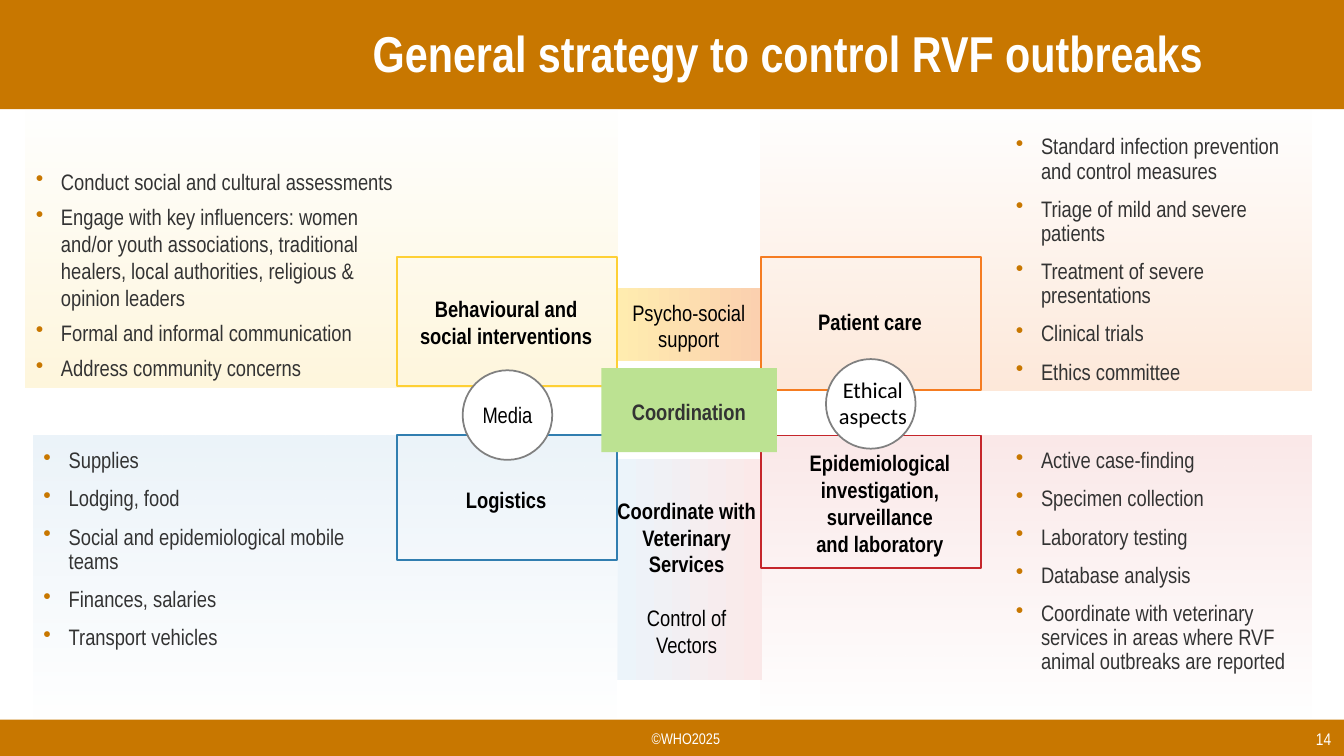
from lxml import etree
from pptx import Presentation
from pptx.dml.color import RGBColor
from pptx.enum.shapes import MSO_SHAPE
from pptx.enum.text import MSO_ANCHOR, PP_ALIGN
from pptx.oxml.ns import qn
from pptx.util import Pt

RECTANGLE, OVAL = MSO_SHAPE.RECTANGLE, MSO_SHAPE.OVAL
TOP, MIDDLE, BOTTOM = MSO_ANCHOR.TOP, MSO_ANCHOR.MIDDLE, MSO_ANCHOR.BOTTOM
LEFT, CENTER, RIGHT = PP_ALIGN.LEFT, PP_ALIGN.CENTER, PP_ALIGN.RIGHT


class Theme:
    font, ethics_font = "Arial Narrow", "Calibri"
    title_size, body_size, number_size, footer_size = 36, 16, 12, 11
    brand, white, black, text, gray = "C87700", "FFFFFF", "000000", "333333", "808080"
    yellow, orange, blue, red = "FED035", "F57C21", "317EB0", "C5262B"
    pale_yellow, pale_orange, pale_blue, pale_red = "FFF7DD", "FEE9DA", "ECF4FA", "FBE9E9"
    support_left, support_right, green = "FFECAF", "FBD0AF", "BCE292"


presentation = Presentation()
presentation.slide_width, presentation.slide_height = Pt(960), Pt(540)
slide = presentation.slides.add_slide(presentation.slide_layouts[5])


def add_box(position, fill=None, line=None, kind=RECTANGLE):
    shape = slide.shapes.add_shape(kind, *map(Pt, position))
    shape.shadow.inherit = False
    if fill:
        shape.fill.solid()
        shape.fill.fore_color.rgb = RGBColor.from_string(fill)
    else:
        shape.fill.background()
    if line:
        shape.line.color.rgb = RGBColor.from_string(line)
        shape.line.width = Pt(1.25)
    else:
        shape.line.fill.background()
    return shape


def add_text(position, texts, color=Theme.black, size=Theme.body_size, bold=False,
             align=CENTER, anchor=MIDDLE, font=Theme.font, box=None):
    """Write one paragraph per text into box, or into a new text box."""
    box = box or slide.shapes.add_textbox(0, 0, 0, 0)
    box.left, box.top, box.width, box.height = map(Pt, position)
    frame = box.text_frame
    frame.word_wrap = True
    frame.vertical_anchor = anchor
    for index, text in enumerate(texts):
        paragraph = frame.add_paragraph() if index else frame.paragraphs[0]
        paragraph.alignment = align
        run = paragraph.add_run()
        run.text = text
        run.font.name, run.font.size, run.font.bold = font, Pt(size), bold
        run.font.color.rgb = RGBColor.from_string(color)
    return frame


# Header and footer
add_box((0, 0, 960, 78), Theme.brand)
add_box((0, 514, 960, 26), Theme.brand)
add_text((382, 518, 216, 19), ["©WHO2025"], Theme.white, Theme.footer_size)
add_text((742, 518, 216, 19), ["14"], Theme.white, Theme.number_size, align=RIGHT)
title = slide.shapes.title
slide.shapes._spTree.append(title._element)
title_frame = add_text((259, 3.5, 678, 73), ["General strategy to control RVF outbreaks"],
                       Theme.white, Theme.title_size, True, LEFT, box=title)
title_frame.paragraphs[0].line_spacing = 0.9

# Shaded areas: angle 0 runs left to right, 270 downwards, 90 upwards;
# the four quadrant panels fade in from transparent
for position, colors, angle, fades in [
    ((441, 328, 103.5, 158), (Theme.pale_blue, Theme.pale_red), 0, False),
    ((441, 206, 103, 52), (Theme.support_left, Theme.support_right), 0, False),
    ((543.5, 76.5, 393, 202.5), (Theme.pale_orange,) * 2, 270, True),
    ((543.5, 311, 393, 202.5), (Theme.pale_red,) * 2, 90, True),
    ((18.5, 74.5, 422.5, 202.5), (Theme.pale_yellow,) * 2, 270, True),
    ((24, 311, 416.5, 202.5), (Theme.pale_blue,) * 2, 90, True),
]:
    panel = add_box(position)
    panel.fill.gradient()
    panel.fill.gradient_angle = angle
    for stop, color in zip(panel.fill.gradient_stops, colors):
        stop.color.rgb = RGBColor.from_string(color)
    if fades:
        first_color = next(panel._element.iter(qn("a:srgbClr")))
        etree.SubElement(first_color, qn("a:alpha"), val="0")

# Framed pillars with their labels
for frame_position, color, label_position, label in [
    ((543.5, 183.5, 157, 95), Theme.orange, (548.5, 216, 146, 27), ["Patient care"]),
    ((283.5, 311, 157, 89), Theme.blue, (288.5, 342, 146, 29), ["Logistics"]),
    ((283.5, 183.5, 157, 92.5), Theme.yellow, (288.5, 207, 146, 46),
     ["Behavioural and social interventions"]),
    ((543.5, 311, 157, 95), Theme.red, (550, 317, 157, 85),
     ["Epidemiological investigation,", "surveillance", "and laboratory"]),
]:
    add_box(frame_position, line=color)
    add_text(label_position, label, bold=True)

# Bulleted activities
for position, anchor, spacing, gap, activities in [
    ((24, 317.5, 260, 169), TOP, 0.9, 10,
     ["Supplies", "Lodging, food", "Social and epidemiological mobile teams",
      "Finances, salaries", "Transport vehicles"]),
    ((18.5, 95, 271, 181), BOTTOM, 1.0, 6,
     ["Conduct social and cultural assessments",
      "Engage with key influencers: women and/or youth associations, traditional "
      "healers, local authorities, religious & opinion leaders",
      "Formal and informal communication", "Address community concerns"]),
    ((718.5, 109.5, 217.5, 169), BOTTOM, 0.9, 10,
     ["Standard infection prevention and control measures",
      "Triage of mild and severe patients", "Treatment of severe presentations",
      "Clinical trials", "Ethics committee"]),
    ((718.5, 317.5, 219.5, 169), TOP, 0.9, 10,
     ["Active case-finding", "Specimen collection", "Laboratory testing", "Database analysis",
      "Coordinate with veterinary services in areas where RVF animal outbreaks are reported"]),
]:
    activity_frame = add_text(position, activities, Theme.text, align=LEFT, anchor=anchor)
    for index, paragraph in enumerate(activity_frame.paragraphs):
        properties = paragraph._p.get_or_add_pPr()
        properties.set("marL", str(Pt(18)))
        properties.set("indent", str(-Pt(18)))
        bullet_color = etree.SubElement(properties, qn("a:buClr"))
        etree.SubElement(bullet_color, qn("a:srgbClr"), val=Theme.brand)
        etree.SubElement(properties, qn("a:buChar"), char="•")
        paragraph.line_spacing = spacing
        if index:
            paragraph.space_before = Pt(gap)

# Centre column
add_box((429.5, 263, 125.5, 60), Theme.green)
add_text((429, 281, 126, 26.5), ["Coordination"], Theme.text, bold=True)
add_text((430.5, 209.5, 123, 46), ["Psycho-social", "support"])
vector_frame = add_text((432.5, 350.5, 116, 124),
                        ["Coordinate with Veterinary Services", "Control of Vectors"], bold=True)
vector_paragraph = vector_frame.paragraphs[1]
vector_paragraph.space_before = Pt(19.3)
vector_paragraph.runs[0].font.bold = False

# Circles between the pillars
for circle_left, circle_top, label_position, label, font in [
    (330.5, 264.5, (329, 282.5, 67, 26.5), "Media", Theme.font),
    (590, 256.5, (583, 264.5, 81, 46), "Ethical aspects", Theme.ethics_font),
]:
    add_box((circle_left, circle_top, 64, 64), Theme.white, Theme.gray, OVAL)
    add_text(label_position, [label], font=font)

presentation.save("out.pptx")
